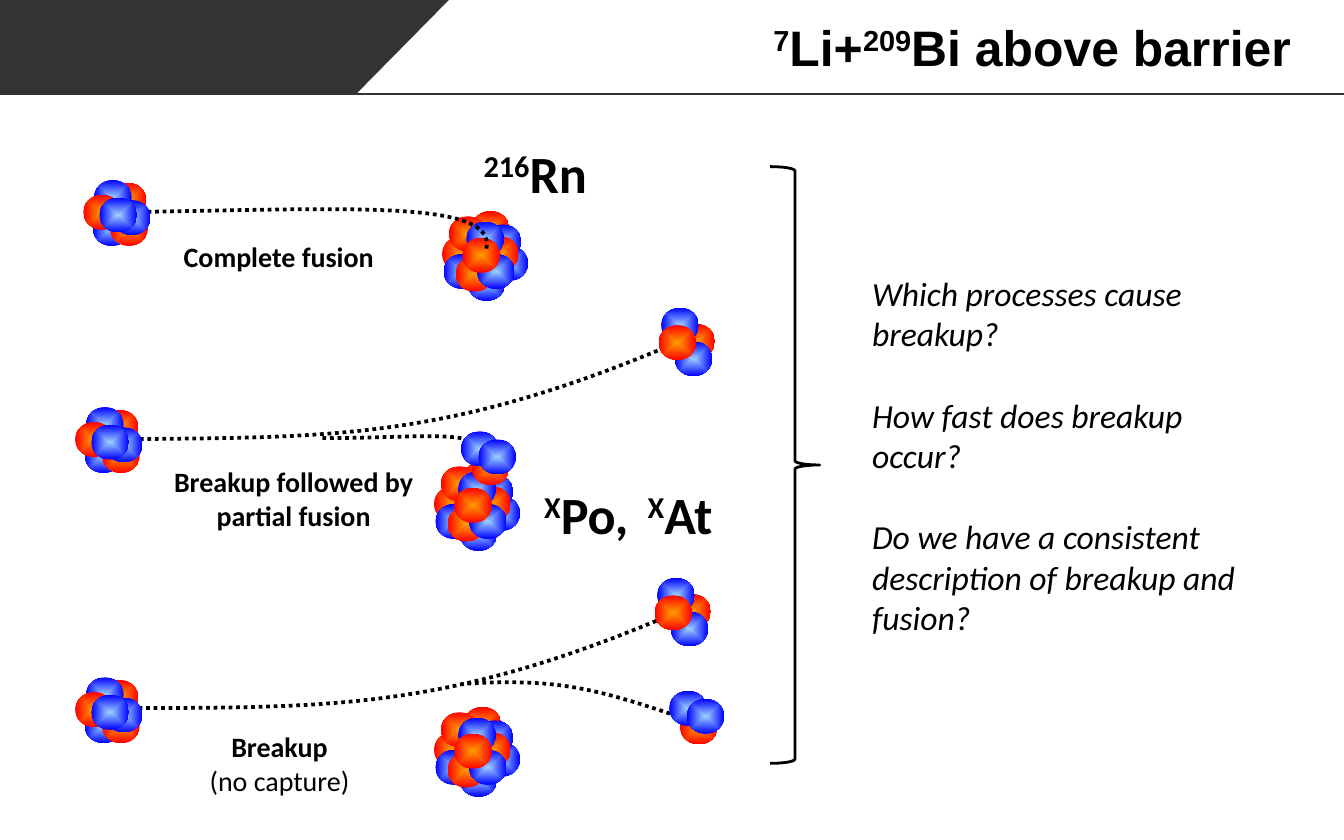
from dataclasses import dataclass

from lxml import etree
from pptx import Presentation
from pptx.dml.color import RGBColor
from pptx.enum.dml import MSO_LINE
from pptx.enum.shapes import MSO_CONNECTOR, MSO_SHAPE
from pptx.enum.text import MSO_ANCHOR, MSO_AUTO_SIZE, PP_ALIGN
from pptx.oxml.ns import qn
from pptx.util import Pt

PX = 9144  # 100 px to the inch
DOT = MSO_LINE.ROUND_DOT
LINE = MSO_CONNECTOR.STRAIGHT
OVAL, RECT = MSO_SHAPE.OVAL, MSO_SHAPE.RECTANGLE
WEDGE, BRACE = MSO_SHAPE.RIGHT_TRIANGLE, MSO_SHAPE.RIGHT_BRACE
MIDDLE, TOP = MSO_ANCHOR.MIDDLE, MSO_ANCHOR.TOP
GROW = MSO_AUTO_SIZE.SHAPE_TO_FIT_TEXT
LEFT, MID, RIGHT = PP_ALIGN.LEFT, PP_ALIGN.CENTER, PP_ALIGN.RIGHT

HEX = {"ink": "000000", "band": "333333"}
GLOW = {"R": ("FF9900", "FF0000"), "B": ("99CCFF", "0000FF")}  # centre, rim


@dataclass
class Ball:
    kind: str
    x: int
    y: int


@dataclass
class Core:
    balls: list[Ball]
    spots: list[tuple[int, int]]


@dataclass
class Style:
    size: float
    face: str = "Calibri"
    bold: bool = True
    slant: bool = False
    align: PP_ALIGN = LEFT
    gap: int = 0


@dataclass
class Label:
    box: tuple[int, int, int, int]
    lines: list[tuple[str, Style]]
    wrap: bool = False
    tab: int = 0


def balls(text: str) -> list[Ball]:
    """Read balls such as 'R0,19 B1,32', from back to front."""
    return [Ball(b[0], *map(int, b[1:].split(","))) for b in text.split()]


# Nuclei: offsets of the balls, then where each nucleus sits
TARGET = Core(balls("R0,19 B1,32 B19,41 R22,0 R5,4 B36,26 B31,10 R10,34 "
                    "R29,19 B26,32 B18,8 R15,20"),
              [(329, 157), (323, 343), (323, 526)])
BEAM = Core(balls("R19,2 B7,23 B8,0 R0,11 R20,23 B22,15 B12,13"),
            [(62, 134), (56, 303), (56, 504)])
TRITON = Core(balls("R8,14 B0,0 B13,6"), [(343, 321), (498, 514)])
ALPHA = Core(balls("R14,12 B12,25 B2,0 R0,13"), [(490, 229), (487, 430)])

# Paths: start, two control points, end
PATHS = [
    [(362, 185), (370, 147), (251, 156), (80, 158)],
    [(361, 354), (370, 315), (332, 326), (239, 326)],
    [(515, 250), (329, 331), (243, 325), (72, 327)],
    [(514, 451), (329, 532), (243, 526), (72, 527)],
    [(525, 540), (446, 513), (419, 504), (343, 509)],
]

HEAD = Style(26.7, "Arial", align=RIGHT)
NOTE = Style(15, align=MID)
PLAIN = Style(15, bold=False, align=MID)
BIG = Style(28)
ASK = Style(18, bold=False, slant=True)
NEXT = Style(18, bold=False, slant=True, gap=22)

# Text between carets is raised
LABELS = [
    Label((126, 173, 163, 35), [("Complete fusion", NOTE)]),
    Label((119, 341, 199, 61), [("Breakup followed by", NOTE),
                                ("partial fusion", NOTE)]),
    Label((145, 538, 126, 61), [("Breakup", NOTE), ("(no capture)", PLAIN)]),
    Label((350, 100, 103, 57), [("^216^Rn", BIG)]),
    Label((395, 354, 151, 57), [("^X^Po,\t^X^At", BIG)], tab=77),
    Label((639, 198, 298, 318), [
        ("Which processes cause breakup?", ASK),
        ("How fast does breakup occur?", NEXT),
        ("Do we have a consistent description of breakup and fusion?", NEXT),
    ], wrap=True),
]


def tint(name: str) -> RGBColor:
    return RGBColor.from_string(HEX[name])


def scale(*vals: int) -> list[int]:
    return [v * PX for v in vals]


def add_form(shapes, kind, *box: int):
    form = shapes.add_shape(kind, *scale(*box))
    form.shadow.inherit = False
    form.line.fill.background()
    return form


def add_band(shapes) -> None:
    for kind, box, turn in ((RECT, (0, 0, 266, 70), 0),
                            (WEDGE, (265, 0, 70, 69), 90)):
        form = add_form(shapes, kind, *box)
        form.rotation = turn
        form.fill.solid()
        form.fill.fore_color.rgb = tint("band")
    rule = shapes.add_connector(LINE, *scale(0, 70, 1000, 70))
    rule.line.color.rgb = tint("band")
    rule.line.width = Pt(1.5)
    etree.SubElement(rule.element.spPr, qn("a:effectLst"))


def add_core(shapes, core: Core) -> None:
    for left, top in core.spots:
        group = shapes.add_group_shape()
        for ball in core.balls:
            form = add_form(group.shapes, OVAL, left + ball.x, top + ball.y, 28, 26)
            form.fill.gradient()
            for stop, code in zip(form.fill.gradient_stops, GLOW[ball.kind]):
                stop.color.rgb = RGBColor.from_string(code)
            # Swap the linear blend for one from the centre
            lin = next(form.element.iter(qn("a:lin")))
            glow = etree.Element(qn("a:path"), {"path": "shape"})
            etree.SubElement(glow, qn("a:fillToRect"), dict.fromkeys("ltrb", "50000"))
            lin.getparent().replace(lin, glow)


def add_curve(shapes, points: list[tuple[int, int]]) -> None:
    pen = shapes.build_freeform(*points[0], scale=PX)
    pen.add_line_segments(points[1:], close=False)
    form = pen.convert_to_shape()
    form.shadow.inherit = False
    form.fill.background()
    form.line.color.rgb = tint("ink")
    form.line.width = Pt(2)
    form.line.dash_style = DOT
    # Join the three segments into one cubic curve
    steps = list(form.element.iter(qn("a:lnTo")))
    curve = etree.SubElement(steps[0].getparent(), qn("a:cubicBezTo"))
    for step in steps:
        curve.append(step[0])
        step.getparent().remove(step)


def write(para, text: str, style: Style, tab: int = 0) -> None:
    para.alignment = style.align
    if style.gap:
        para.space_before = Pt(style.gap)
    if tab:
        tabs = etree.SubElement(para._p.get_or_add_pPr(), qn("a:tabLst"))
        etree.SubElement(tabs, qn("a:tab"), pos=str(tab * PX), algn="l")
    font = para.font
    font.name, font.size = style.face, Pt(style.size)
    font.bold, font.italic = style.bold, style.slant
    font.color.rgb = tint("ink")
    for i, part in enumerate(text.split("^")):
        if part:
            run = para.add_run()
            run.text = part
            if i % 2:
                run._r.get_or_add_rPr().set("baseline", "30000")


def add_label(shapes, label: Label) -> None:
    frame = shapes.add_textbox(*scale(*label.box)).text_frame
    frame.word_wrap = label.wrap
    frame.auto_size = GROW
    frame.vertical_anchor = TOP
    for i, (text, style) in enumerate(label.lines):
        para = frame.add_paragraph() if i else frame.paragraphs[0]
        write(para, text, style, label.tab)


def add_title(title) -> None:
    title.left, title.top, title.width, title.height = scale(267, 0, 733, 69)
    frame = title.text_frame
    frame.vertical_anchor = MIDDLE
    frame.margin_left, frame.margin_right = scale(10, 39)
    frame.margin_top = frame.margin_bottom = 5 * PX
    write(frame.paragraphs[0], "^7^Li+^209^Bi above barrier", HEAD)


def main() -> None:
    deck = Presentation()
    deck.slide_width, deck.slide_height = scale(1000, 625)
    slide = deck.slides.add_slide(deck.slide_layouts[5])
    shapes = slide.shapes
    add_band(shapes)
    add_title(shapes.title)

    # Reactions: paths run over the targets and under the other nuclei
    add_core(shapes, TARGET)
    for points in PATHS:
        add_curve(shapes, points)
    for core in (BEAM, TRITON, ALPHA):
        add_core(shapes, core)

    # Brace and wording
    brace = add_form(shapes, BRACE, 573, 124, 37, 444)
    brace.fill.background()
    brace.line.color.rgb = tint("ink")
    brace.line.width = Pt(1.5)
    for label in LABELS:
        add_label(shapes, label)
    deck.save("out.pptx")


if __name__ == "__main__":
    main()
